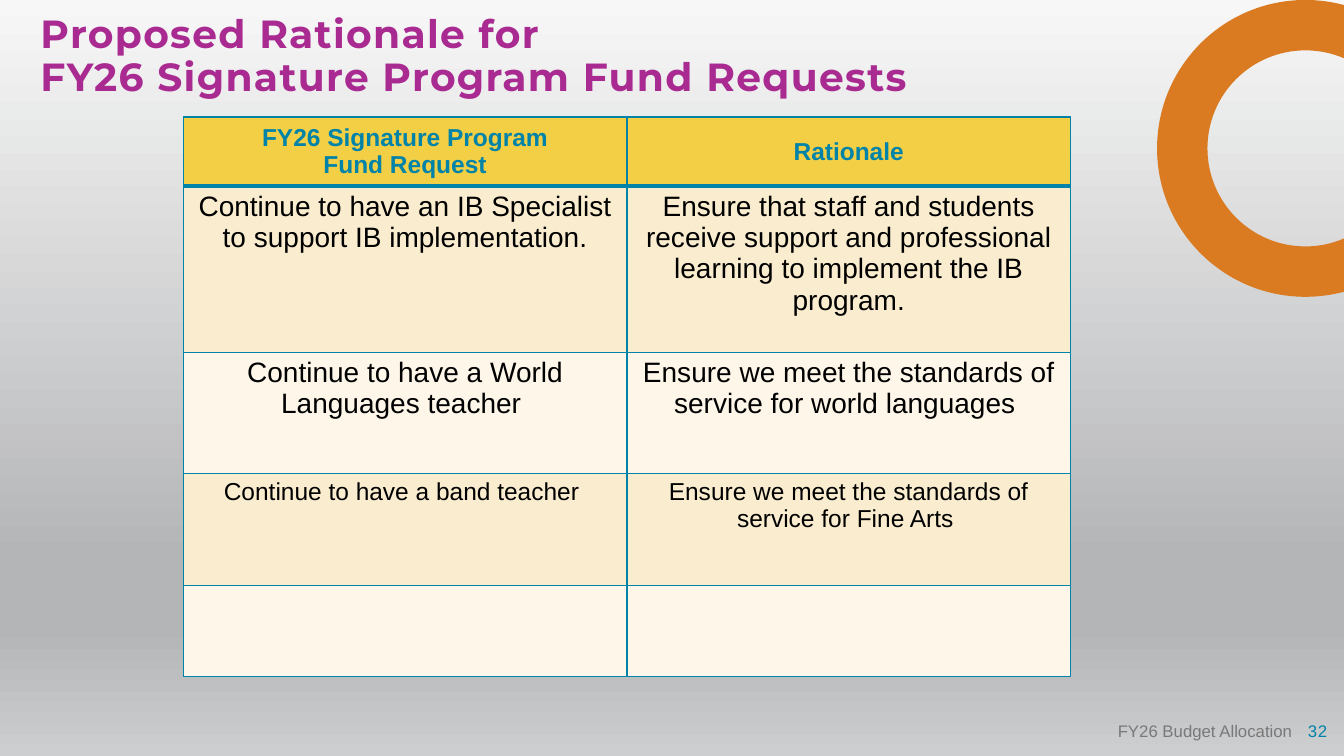
import math
from lxml import etree
from pptx import Presentation
from pptx import util as u
from pptx.dml.color import RGBColor
from pptx.enum import text
from pptx.oxml import ns

WIDTH, HEIGHT = 33.87, 19.05
TEAL, ORANGE, PURPLE, GRAY = "0083A9", "DA7B22", "A92A91", "797979"
GOLD, SAND, CREAM = "F3CF45", "FAEDCF", "FDF6E9"
BACKDROP = [(0, "F7F7F7"), (74, "B4B5B7"), (83, "B4B5B7"), (100, "CDCECF")]
HEADERS = ["FY26 Signature Program\nFund Request", "Rationale"]
REQUESTS = [
    ("Continue to have an IB Specialist to support IB implementation.",
     "Ensure that staff and students receive support and professional "
     "learning to implement the IB program."),
    ("Continue to have a World Languages teacher ",
     "Ensure we meet the standards of service for world languages "),
    ("Continue to have a band teacher ",
     "Ensure we meet the standards of service for Fine Arts "),
    ("", ""),
]
ROW_HEIGHTS = [1.65, 4.19, 3.05, 2.82, 2.31]
TEXT_SIZES = [17.5, 20, 20, 17.5, 17.5]
ROW_FILLS = [GOLD, SAND, CREAM, SAND, CREAM]


def color(hex_value):
    return RGBColor.from_string(hex_value)


def add_element(parent, tag, **attributes):
    return etree.SubElement(parent, ns.qn(tag), attributes)


def write(frame, words, align, size, hue, font="Arial", bold=False, spacing=0, **paragraph_format):
    """Fill a text frame: newline starts a paragraph, vertical tab breaks a line."""
    for number, content in enumerate(words.split("\n")):
        paragraph = frame.paragraphs[0] if number == 0 else frame.add_paragraph()
        for name, value in {"alignment": align, **paragraph_format}.items():
            setattr(paragraph, name, value)
        for position, line in enumerate(content.split("\v")):
            if position:
                paragraph.add_line_break()
            run = paragraph.add_run()
            run.text = line
            for name, value in {"size": u.Pt(size), "name": font, "bold": bold}.items():
                setattr(run.font, name, value)
            run.font.color.rgb = color(hue)
            if spacing:
                run.font._element.set("spc", str(int(spacing * 100)))


def add_label(slide, box, words, align, size, hue, inset=0.0,
              anchor=text.MSO_ANCHOR.MIDDLE, **style):
    frame = slide.shapes.add_textbox(*map(u.Cm, box)).text_frame
    settings = {"word_wrap": True, "vertical_anchor": anchor}
    settings.update({f"margin_{side}": u.Cm(inset) for side in ("left", "right", "top", "bottom")})
    for name, value in settings.items():
        setattr(frame, name, value)
    write(frame, words, align, size, hue, **style)


def paint_background(slide):
    fill = slide.background.fill
    fill.gradient()
    fill.gradient_angle = 270
    stops = slide._element.find(".//" + ns.qn("a:gsLst"))
    for stop in list(stops):
        stops.remove(stop)
    for position, hue in BACKDROP:
        stop = add_element(stops, "a:gs", pos=str(position * 1000))
        add_element(stop, "a:srgbClr", val=hue)


def arc_points(center_x, center_y, radius):
    """Bezier points of a circle that is open where it meets the slide's right edge."""
    opening = math.acos((WIDTH - center_x) / radius)
    angles = [opening, math.pi / 2, math.pi, 3 * math.pi / 2, 2 * math.pi - opening]

    def point(angle, handle=0.0):
        return (u.Cm(center_x + radius * (math.cos(angle) - handle * math.sin(angle))),
                u.Cm(center_y - radius * (math.sin(angle) + handle * math.cos(angle))))

    points = [point(opening)]
    for start, end in zip(angles, angles[1:]):
        handle = 4 / 3 * math.tan((end - start) / 4)
        points += [point(start, handle), point(end, -handle), point(end)]
    return points


def add_ring(slide, box):
    """Ring filling the square box, cut off at the slide's right edge."""
    left, top, size = box
    outer, band = size / 2, 1.27
    center = (left + outer, top + outer)
    outside = arc_points(*center, outer)
    inside = arc_points(*center, outer - band)[::-1]
    builder = slide.shapes.build_freeform(*outside[0])
    builder.add_line_segments(outside[1:] + inside, close=True)
    ring = builder.convert_to_shape()

    # Turn each three segments of an arc into one curve
    segments = ring._element.findall(".//" + ns.qn("a:lnTo"))
    curved = len(outside) - 1
    for arc in (segments[:curved], segments[curved + 1:]):
        for first in range(0, curved, 3):
            trio = arc[first:first + 3]
            curve = etree.Element(ns.qn("a:cubicBezTo"))
            trio[0].addprevious(curve)
            for segment in trio:
                curve.append(segment[0])
                segment.getparent().remove(segment)

    ring.shadow.inherit = False
    ring.fill.solid()
    ring.fill.fore_color.rgb = color(ORANGE)
    ring.line.fill.background()


def add_borders(cell, widths):
    properties = cell._tc.get_or_add_tcPr()
    for side, width in widths.items():
        line = add_element(properties, f"a:ln{side}", w=str(u.Pt(width)))
        add_element(add_element(line, "a:solidFill"), "a:srgbClr", val=TEAL)


def add_requests_table(slide, box):
    left, top, width = box
    rows = [HEADERS, *REQUESTS]
    table = slide.shapes.add_table(
        len(rows), len(HEADERS), *map(u.Cm, (left, top, width, sum(ROW_HEIGHTS)))).table
    table.horz_banding = False
    for column in table.columns:
        column.width = u.Cm(width / len(HEADERS))
    for r, entries in enumerate(rows):
        table.rows[r].height = u.Cm(ROW_HEIGHTS[r])
        header = r == 0
        for c, words in enumerate(entries):
            cell = table.cell(r, c)
            add_borders(cell, {"L": 1, "R": 1, "T": 1, "B": 3 if header else 1})
            cell.fill.solid()
            cell.fill.fore_color.rgb = color(ROW_FILLS[r])
            cell.vertical_anchor = text.MSO_ANCHOR.MIDDLE if header else text.MSO_ANCHOR.TOP
            if words:
                write(cell.text_frame, words, text.PP_ALIGN.CENTER, TEXT_SIZES[r],
                      TEAL if header else "000000", bold=header)


def add_footer(slide, box):
    left, top, width, height = box
    right = text.PP_ALIGN.RIGHT
    add_label(slide, box, "32", right, 12, TEAL, spacing=0.5)
    add_label(slide, (left + 1.58, top, width - 2.21, height),
              "FY26 Budget Allocation", right, 12, GRAY, inset=0.25)


def main():
    deck = Presentation()
    deck.slide_width, deck.slide_height = u.Cm(WIDTH), u.Cm(HEIGHT)
    slide = deck.slides.add_slide(deck.slide_layouts[6])
    paint_background(slide)
    add_ring(slide, (29.16, 0, 7.48))
    # Title
    add_label(slide, (1.02, 0.38, 28.73, 2.62),
              "Proposed Rationale for \vFY26 Signature Program Fund Requests",
              text.PP_ALIGN.LEFT, 28, PURPLE, anchor=text.MSO_ANCHOR.TOP,
              font="Montserrat", bold=True, spacing=1, line_spacing=0.9)
    add_requests_table(slide, (4.62, 2.95, 22.36))
    add_footer(slide, (25.83, 17.91, 7.62, 1.02))
    deck.save("out.pptx")


if __name__ == "__main__":
    main()
